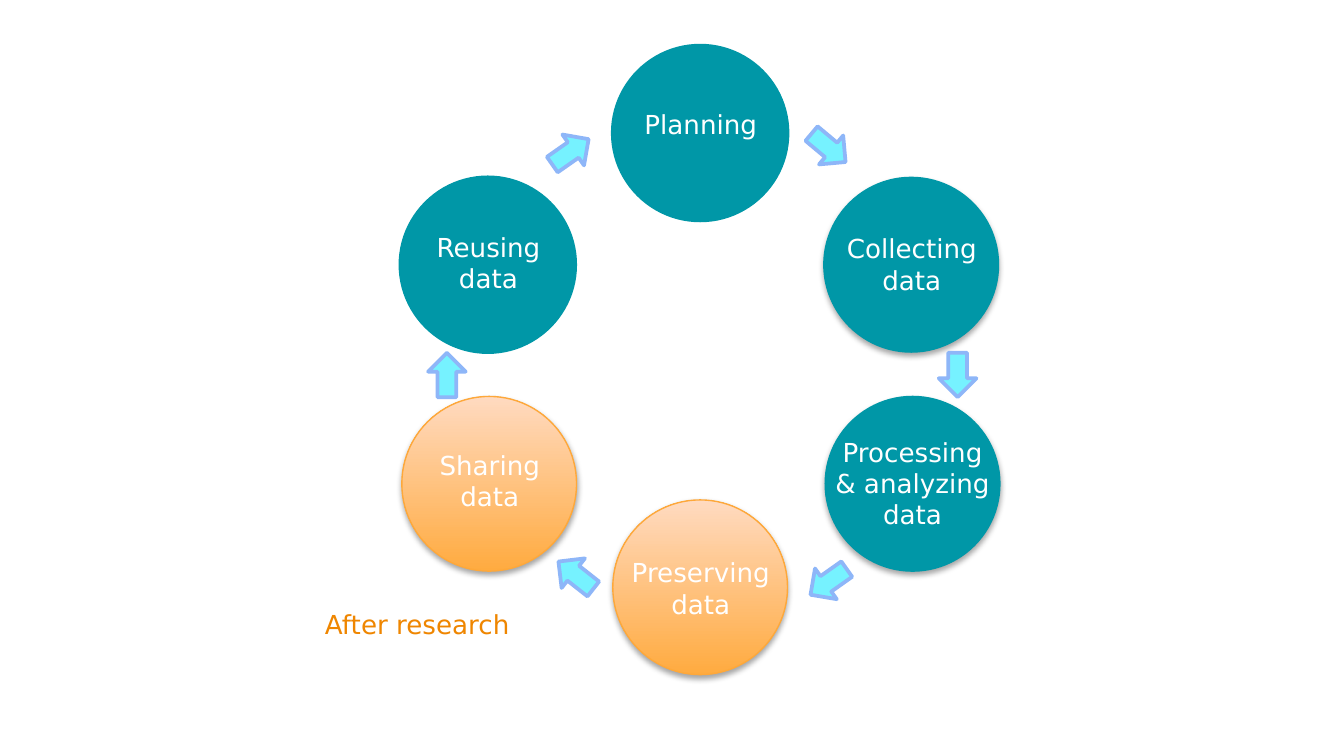
from lxml.etree import SubElement
from pptx import Presentation
from pptx.dml.color import RGBColor
from pptx.enum.shapes import MSO_SHAPE as Shape
from pptx.enum.text import MSO_ANCHOR as Anchor, MSO_AUTO_SIZE as AutoSize, PP_ALIGN as Align
from pptx.oxml.ns import qn
from pptx.util import Inches, Pt

COLORS = {
    "teal": "0097A7", "orange": "FFAB40", "peach": "FFDAC0", "rim": "FEA83A",
    "arrow": "76F2FF", "arrow_rim": "8EB6F8", "white": "FFFFFF",
    "caption": "EF8600", "shadow": "000000",
}
RGB = {name: RGBColor.from_string(value) for name, value in COLORS.items()}

prs = Presentation()
prs.slide_width = Inches(10)
prs.slide_height = prs.slide_width * 9 // 16
s = prs.slides.add_slide(prs.slide_layouts[6])
COL = prs.slide_width / 10  # square grid, ten columns across
DIAMETER = 1.3
ARROW_W, ARROW_H = 0.33, 0.28


def add_shape(kind, x, y, w, h, line, weight):
    sp = s.shapes.add_shape(kind, *(round(v * COL) for v in (x, y, w, h)))
    sp.shadow.inherit = False
    sp.line.color.rgb = RGB[line]
    sp.line.width = Pt(weight)
    return sp


def add_text(text, x, y, w, h, color, align, anchor):
    tb = s.shapes.add_textbox(*(round(v * COL) for v in (x, y, w, h)))
    tf = tb.text_frame
    tf.word_wrap = True
    tf.auto_size = AutoSize.SHAPE_TO_FIT_TEXT
    tf.vertical_anchor = anchor
    p = tf.paragraphs[0]
    p.alignment = align
    r = p.add_run()
    r.text = text
    r.font.name = "DejaVu Sans"
    r.font.size = Pt(14)
    r.font.color.rgb = RGB[color]


# Stage circles: left, top, after research, raised
stages = [
    (4.56, 0.34, False, False),
    (4.56, 3.72, True, True),
    (6.13, 1.32, False, True),
    (6.14, 2.95, False, True),
    (2.98, 1.32, False, False),
    (2.99, 2.95, True, True),
]
for x, y, after, raised in stages:
    sp = add_shape(Shape.OVAL, x, y, DIAMETER, DIAMETER,
                   "rim" if after else "teal", 0.75 if raised else 2)
    if after:
        sp.fill.gradient()
        sp.fill.gradient_angle = 90
        for stop, name in zip(sp.fill.gradient_stops, ("orange", "peach")):
            stop.color.rgb = RGB[name]
    else:
        sp.fill.solid()
        sp.fill.fore_color.rgb = RGB["teal"]
    if raised:
        effects = sp.element.spPr.find(qn("a:effectLst"))
        shadow = SubElement(effects, qn("a:outerShdw"), blurRad=str(Pt(3.1)),
                            dist=str(Pt(1.8)), dir="5400000", rotWithShape="0")
        tint = SubElement(shadow, qn("a:srgbClr"), val=COLORS["shadow"])
        SubElement(tint, qn("a:alpha"), val="35000")

# Arrows between stages: left, top, rotation
arrows = [
    (6, 0.96, 39.9), (6.96, 2.65, 90), (6, 4.19, 144.7),
    (4.08, 0.99, 325), (4.12, 4.14, 218.2), (3.16, 2.65, 270),
]
for x, y, angle in arrows:
    sp = add_shape(Shape.RIGHT_ARROW, x, y, ARROW_W, ARROW_H, "arrow_rim", 2)
    sp.fill.solid()
    sp.fill.fore_color.rgb = RGB["arrow"]
    sp.rotation = angle

labels = [
    ("Planning", 4.68, 0.75, 1.07, 0.34),
    ("Collecting data", 6.2, 1.67, 1.17, 0.59),
    ("Processing & analyzing data", 6.1, 3.19, 1.38, 0.81),
    ("Preserving data", 4.58, 4.09, 1.27, 0.57),
    ("Sharing data", 3.11, 3.29, 1.07, 0.57),
    ("Reusing data", 3.1, 1.67, 1.07, 0.57),
]
for label in labels:
    add_text(*label, "white", Align.CENTER, Anchor.MIDDLE)
add_text("After research", 2.32, 4.48, 2.1, 0.34, "caption", Align.LEFT, Anchor.TOP)

prs.save("out.pptx")
